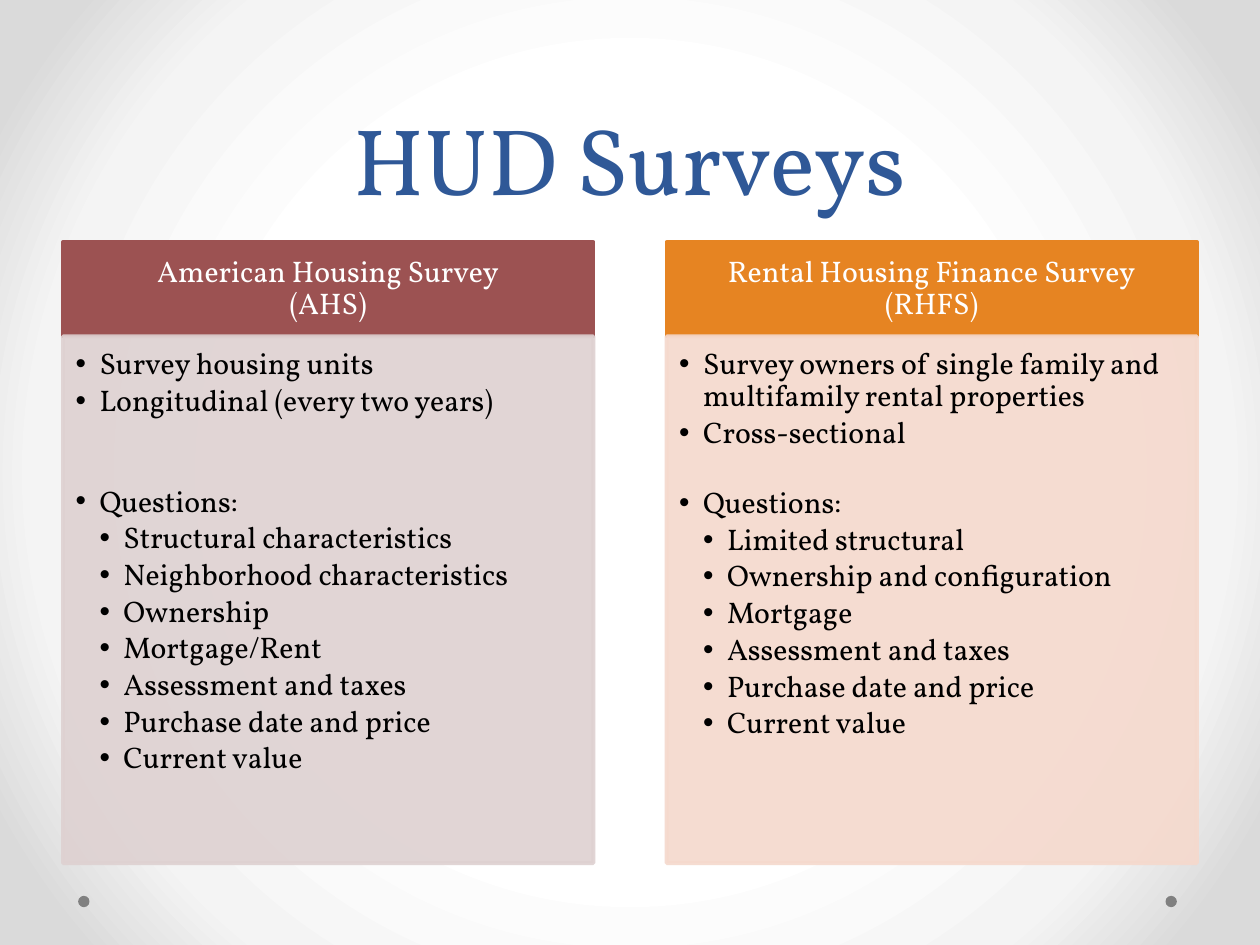
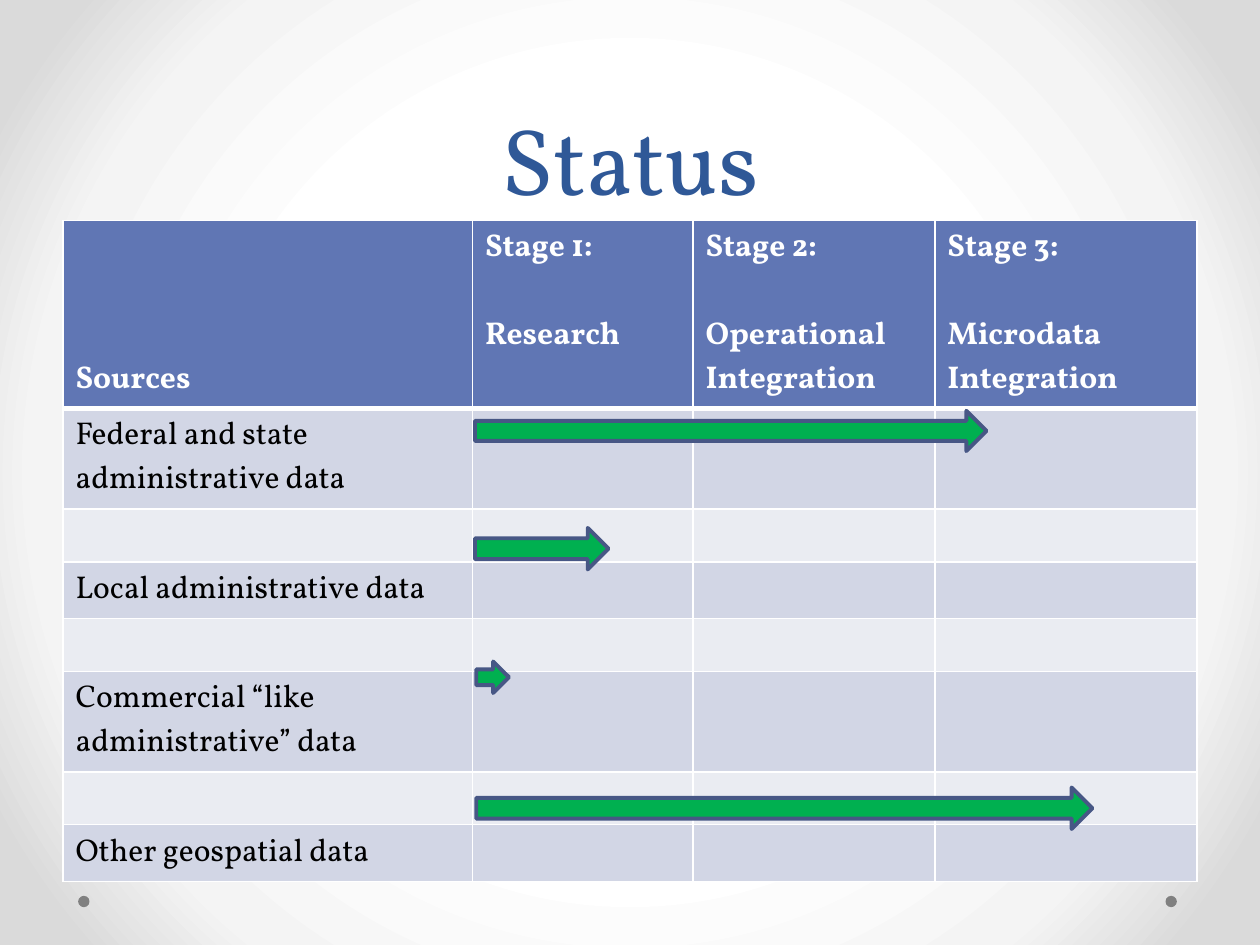
"""Builds two survey slides: a comparison of two surveys and a status table."""
from pptx import Presentation
from pptx.dml.color import RGBColor
from pptx.enum.shapes import MSO_SHAPE as SHAPE
from pptx.enum.text import MSO_ANCHOR as ANCHOR, MSO_AUTO_SIZE as AUTO_SIZE, PP_ALIGN as ALIGN
from pptx.oxml import parse_xml
from pptx.oxml.ns import nsdecls, qn
from pptx.util import Inches, Pt
from lxml.etree import SubElement

FONT = "Vollkorn"
WHITE = RGBColor(0xFF, 0xFF, 0xFF)
BLACK = RGBColor(0, 0, 0)
TITLE_BLUE = RGBColor(0x2F, 0x58, 0x97)
DOT_GREY = RGBColor(0x80, 0x80, 0x80)
MAROON = RGBColor(0x9C, 0x52, 0x52)
PALE_MAROON = RGBColor(0xDE, 0xD1, 0xD1)
ORANGE = RGBColor(0xE6, 0x84, 0x22)
PALE_ORANGE = RGBColor(0xF5, 0xD9, 0xCD)
HEADER_BLUE = RGBColor(0x60, 0x76, 0xB4)
ROW_DARK = RGBColor(0xD2, 0xD6, 0xE5)
ROW_LIGHT = RGBColor(0xEA, 0xEC, 0xF2)
ARROW_GREEN = RGBColor(0x00, 0xB0, 0x50)
ARROW_EDGE = RGBColor(0x47, 0x57, 0x85)
GLOW_STOPS = [(50, WHITE), (76, RGBColor(0xF4, 0xF4, 0xF4)), (92, RGBColor(0xDA, 0xDA, 0xDA))]

LAYOUT_COMPARISON, LAYOUT_TITLE_ONLY = 4, 5
MARGIN = 0.5
INDENT = 0.19

SURVEYS = [
    ("American Housing Survey\v(AHS)", MAROON, PALE_MAROON, 36.5,
     ["Survey housing units", "Longitudinal (every two years)"],
     ["Structural characteristics", "Neighborhood characteristics", "Ownership",
      "Mortgage/Rent", "Assessment and taxes", "Purchase date and price", "Current value"]),
    ("Rental Housing Finance Survey\v(RHFS)", ORANGE, PALE_ORANGE, 19,
     ["Survey owners of single family and multifamily rental properties", "Cross-sectional"],
     ["Limited structural", "Ownership and configuration", "Mortgage",
      "Assessment and taxes", "Purchase date and price", "Current value"]),
]
STAGES = ["Sources", "Stage 1:\nResearch", "Stage 2:\nOperational Integration",
          "Stage 3:\nMicrodata\vIntegration"]
SOURCES = ["Federal and state administrative data", "", "Local administrative data", "",
           "Commercial “like administrative” data", "", "Other geospatial data"]
COLUMN_WIDTHS = [3.25, 1.75, 1.92, 2.08]
ROW_HEIGHTS = [1.04, 0.73, 0.42, 0.42, 0.42, 0.73, 0.42, 0.42]
PROGRESS_ARROWS = [(3.27, 1.51, 4.06, 0.32), (3.27, 2.44, 1.06, 0.33),
                   (3.28, 3.5, 0.26, 0.25), (3.28, 4.5, 4.89, 0.33)]


def place(sp, left, top, width, height):
    """Move a shape to a box given in inches."""
    sp.left, sp.top, sp.width, sp.height = map(Inches, (left, top, width, height))


def paint(sp, fill, line=None):
    """Give a shape a solid fill and an optional outline."""
    sp.fill.solid()
    sp.fill.fore_color.rgb = fill
    if line is None:
        sp.line.fill.background()
    else:
        sp.line.color.rgb = line
        sp.line.width = Pt(2.25)


def style_runs(p, size, color, bold=False):
    """Format every run of a paragraph."""
    for r in p.runs:
        r.font.name, r.font.size, r.font.bold = FONT, Pt(size), bold
        r.font.color.rgb = color


def space(p, line, before=0, after=0):
    """Set line and paragraph spacing, in points where they are lengths."""
    p.line_spacing, p.space_before, p.space_after = line, Pt(before), Pt(after)


def set_insets(tf, left, top, right, bottom):
    """Set the inner margins of a text frame in inches."""
    tf.margin_left, tf.margin_top = Inches(left), Inches(top)
    tf.margin_right, tf.margin_bottom = Inches(right), Inches(bottom)


def add_shape(slide, kind, box, fill, line=None):
    """Add a flat preset shape."""
    sp = slide.shapes.add_shape(kind, *map(Inches, box))
    sp.shadow.inherit = False
    paint(sp, fill, line)
    return sp


def style_master(prs):
    """Put the radial glow and the title position on the master."""
    master = prs.slide_master
    stops = "".join(f'<a:gs pos="{pos * 1000}"><a:srgbClr val="{color}"/></a:gs>'
                    for pos, color in GLOW_STOPS)
    c_sld = master.element.cSld
    c_sld.remove(c_sld.find(qn("p:bg")))
    c_sld.insert(0, parse_xml(
        f'<p:bg {nsdecls("p", "a")}><p:bgPr><a:gradFill rotWithShape="1"><a:gsLst>{stops}</a:gsLst>'
        '<a:path path="circle"><a:fillToRect l="50000" t="50000" r="50000" b="50000"/></a:path>'
        '</a:gradFill><a:effectLst/></p:bgPr></p:bg>'))
    place(master.placeholders[0], MARGIN, 0, 9, 1.75)


def add_master_dots(prs, slide):
    """Draw the two footer dots and move them to the master."""
    for left in (0.62, 9.25):
        dot = add_shape(slide, SHAPE.OVAL, (left, 7.11, 0.09, 0.09), DOT_GREY)
        prs.slide_master.shapes.element.append(dot.element)


def add_titled_slide(prs, layout, title):
    """Add a slide with its formatted title."""
    slide = prs.slides.add_slide(prs.slide_layouts[layout])
    tf = slide.shapes.title.text_frame
    tf.text = title
    tf.auto_size, tf.vertical_anchor = AUTO_SIZE.NONE, ANCHOR.BOTTOM
    p = tf.paragraphs[0]
    p.alignment = ALIGN.CENTER
    space(p, Pt(58))
    style_runs(p, 54, TITLE_BLUE)
    return slide


def add_bullet(p, text, level, before=0):
    """Fill a paragraph as a bulleted line at the given level."""
    p.text, p.level = text, level
    space(p, 0.9, before, 2.6)
    style_runs(p, 17, BLACK)
    p_pr = p._p.get_or_add_pPr()
    p_pr.set("marL", str(Inches(INDENT * (level + 1))))
    p_pr.set("indent", str(-Inches(INDENT)))
    SubElement(p_pr, qn("a:buChar")).set("char", "•")


def fill_survey(header, body, box, survey):
    """Lay out one survey column: a header band above a bulleted panel."""
    name, strong, pale, gap, facts, questions = survey
    left, top, width, height = box
    band = 0.75
    place(header, left, top, width, band)
    paint(header, strong, strong)
    tf = header.text_frame
    tf.auto_size, tf.vertical_anchor = AUTO_SIZE.NONE, ANCHOR.MIDDLE
    set_insets(tf, 0.13, 0.08, 0.13, 0.08)
    p = tf.paragraphs[0]
    p.text, p.alignment = name, ALIGN.CENTER
    space(p, 0.9)
    style_runs(p, 17, WHITE)

    place(body, left, top + band, width, height - band)
    paint(body, pale, pale)
    for color in body.element.spPr.iter(qn("a:srgbClr")):
        SubElement(color, qn("a:alpha")).set("val", "90000")
    tf = body.text_frame
    tf.auto_size, tf.vertical_anchor = AUTO_SIZE.NONE, ANCHOR.TOP
    set_insets(tf, 0.1, 0.1, 0.13, 0.15)
    lines = [(fact, 0, 0) for fact in facts] + [("Questions:", 0, gap)]
    lines += [(question, 1, 0) for question in questions]
    for i, line in enumerate(lines):
        add_bullet(tf.add_paragraph() if i else tf.paragraphs[0], *line)


def build_surveys(prs):
    """Build the slide that compares the two surveys."""
    slide = add_titled_slide(prs, LAYOUT_COMPARISON, "HUD Surveys")
    parts = list(slide.placeholders)[1:]
    width, pitch = 4.21, 4.79
    for i, survey in enumerate(SURVEYS):
        box = (MARGIN + i * pitch, 1.92, width, 4.93)
        fill_survey(parts[2 * i], parts[2 * i + 1], box, survey)
    return slide


def style_cell(cell, fill, bottom):
    """Give a cell white borders and a solid fill."""
    tc_pr = cell._tc.get_or_add_tcPr()
    for side, width in (("L", 1), ("R", 1), ("T", 1), ("B", bottom)):
        tc_pr.append(parse_xml(
            f'<a:ln{side} {nsdecls("a")} w="{Pt(width)}"><a:solidFill>'
            f'<a:srgbClr val="{WHITE}"/></a:solidFill></a:ln{side}>'))
    cell.fill.solid()
    cell.fill.fore_color.rgb = fill


def add_status_table(slide, left, top):
    """Add the table of sources against stages."""
    rows = [STAGES] + [[source, "", "", ""] for source in SOURCES]
    table = slide.shapes.add_table(
        len(rows), len(STAGES), Inches(left), Inches(top),
        Inches(sum(COLUMN_WIDTHS)), Inches(sum(ROW_HEIGHTS))).table
    for column, width in zip(table.columns, COLUMN_WIDTHS):
        column.width = Inches(width)
    for i, (row, texts) in enumerate(zip(table.rows, rows)):
        row.height = Inches(ROW_HEIGHTS[i])
        is_header = i == 0
        fill = HEADER_BLUE if is_header else ROW_DARK if i % 2 else ROW_LIGHT
        for cell, text in zip(row.cells, texts):
            style_cell(cell, fill, 3 if is_header else 1)
            cell.text_frame.text = text
            for j, p in enumerate(cell.text_frame.paragraphs):
                p.space_before = Pt(25 * j)
                style_runs(p, 18, WHITE if is_header else BLACK, is_header)
    table.cell(0, 0).vertical_anchor = ANCHOR.BOTTOM


def build_status(prs):
    """Build the slide that shows how far each source has come."""
    slide = add_titled_slide(prs, LAYOUT_TITLE_ONLY, "Status")
    left, top = MARGIN, 1.75
    add_status_table(slide, left, top)
    for x, y, width, height in PROGRESS_ARROWS:
        add_shape(slide, SHAPE.RIGHT_ARROW, (left + x, top + y, width, height),
                  ARROW_GREEN, ARROW_EDGE)


def main():
    """Build and save the presentation."""
    prs = Presentation()
    prs.slide_width, prs.slide_height = Inches(10), Inches(7.5)
    style_master(prs)
    add_master_dots(prs, build_surveys(prs))
    build_status(prs)
    prs.save("out.pptx")


if __name__ == "__main__":
    main()
